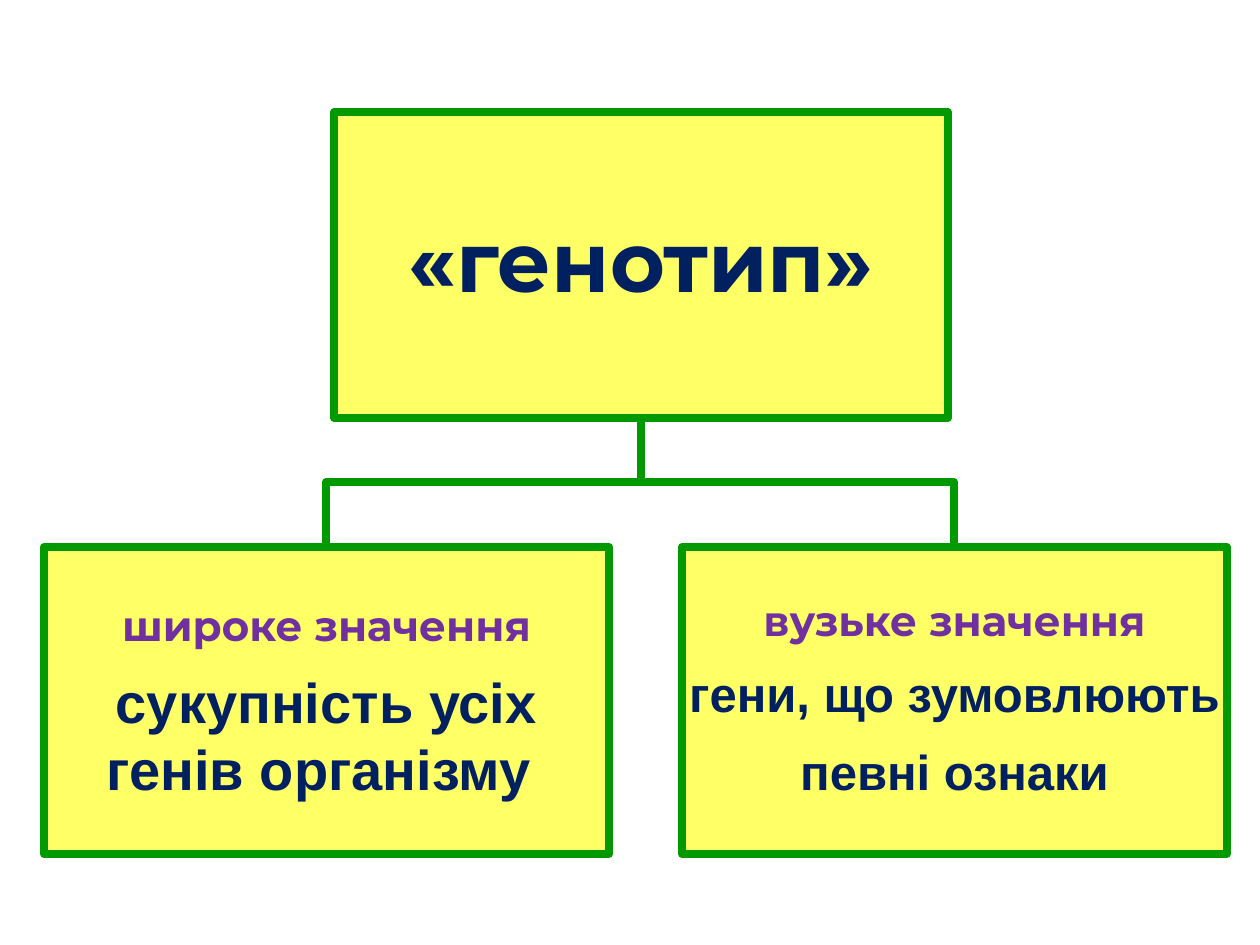
from collections import namedtuple
from dataclasses import dataclass

from pptx import Presentation
from pptx.dml.color import RGBColor
from pptx.enum.shapes import MSO_SHAPE as Preset
from pptx.enum.text import MSO_ANCHOR as Anchor, MSO_AUTO_SIZE as AutoSize, PP_ALIGN as Align
from pptx.util import Pt

PX = 914400 / 126
TITLE_ONLY = 5

Box = namedtuple("Box", "left top width height")
Line = namedtuple("Line", "text style")


@dataclass(frozen=True)
class Theme:
    fill: str = "FFFF66"
    border: str = "009900"
    ink: str = "002060"
    accent: str = "7030A0"
    border_width: float = 4.5
    term_size: int = 48
    heading_size: int = 24
    broad_size: int = 32
    narrow_size: int = 28
    display_font: str = "Montserrat"
    body_font: str = "Arial"


THEME = Theme()

STYLES = {
    "term": dict(font=THEME.display_font, size=THEME.term_size, color=THEME.ink, spacing=0.9, after=0),
    "broad_heading": dict(font=THEME.display_font, size=THEME.heading_size, color=THEME.accent, spacing=1.0, after=10),
    "narrow_heading": dict(font=THEME.display_font, size=THEME.heading_size, color=THEME.accent, spacing=0.9, after=10),
    "broad": dict(font=THEME.body_font, size=THEME.broad_size, color=THEME.ink, spacing=1.0, after=0),
    "narrow": dict(font=THEME.body_font, size=THEME.narrow_size, color=THEME.ink, spacing=1.0, after=11),
}

TERM_BOX = Box(334, 112, 614, 306)
TERM = [Line("«генотип»", "term")]
MEANINGS = [
    (Box(44, 547, 565, 307), [
        Line("широке значення", "broad_heading"),
        Line("сукупність усіх генів організму ", "broad"),
    ]),
    (Box(682, 547, 545, 307), [
        Line("вузьке значення", "narrow_heading"),
        Line("гени, що зумовлюють", "narrow"),
        Line("певні ознаки", "narrow"),
    ]),
]


def px(length):
    return round(length * PX)


def apply(target, values):
    for name, value in values.items():
        setattr(target, name, value)


def draw_border(shape):
    shape.shadow.inherit = False
    shape.line.color.rgb = RGBColor.from_string(THEME.border)
    shape.line.width = Pt(THEME.border_width)


def write_lines(frame, lines):
    apply(frame, dict(word_wrap=True, auto_size=AutoSize.NONE, vertical_anchor=Anchor.MIDDLE))
    apply(frame, {f"margin_{side}": px(3) for side in ("left", "top", "right", "bottom")})
    for index, line in enumerate(lines):
        style = STYLES[line.style]
        paragraph = frame.add_paragraph() if index else frame.paragraphs[0]
        paragraph.text = line.text
        apply(paragraph, dict(alignment=Align.CENTER, line_spacing=style["spacing"],
                              space_before=Pt(0), space_after=Pt(style["after"])))
        apply(paragraph.font, dict(name=style["font"], size=Pt(style["size"]), bold=True))
        paragraph.font.color.rgb = RGBColor.from_string(style["color"])


def format_node(node, lines):
    node.fill.solid()
    node.fill.fore_color.rgb = RGBColor.from_string(THEME.fill)
    draw_border(node)
    write_lines(node.text_frame, lines)


def add_term(slide):
    term = slide.shapes.title
    apply(term, {side: px(length) for side, length in TERM_BOX._asdict().items()})
    format_node(term, TERM)


def add_branch(slide, parent, child):
    start_x, start_y = parent.left + parent.width / 2, parent.top + parent.height
    end_x, end_y = child.left + child.width / 2, child.top
    middle_y = (start_y + end_y) / 2
    builder = slide.shapes.build_freeform(start_x, start_y, scale=PX)
    builder.add_line_segments([(start_x, middle_y), (end_x, middle_y), (end_x, end_y)], close=False)
    branch = builder.convert_to_shape()
    branch.fill.background()
    draw_border(branch)


def add_meaning(slide, box, lines):
    meaning = slide.shapes.add_shape(Preset.RECTANGLE, *map(px, box))
    format_node(meaning, lines)


def main():
    deck = Presentation()
    apply(deck, dict(slide_width=px(1260), slide_height=px(945)))
    slide = deck.slides.add_slide(deck.slide_layouts[TITLE_ONLY])
    add_term(slide)
    for box, lines in MEANINGS:
        add_branch(slide, TERM_BOX, box)
        add_meaning(slide, box, lines)
    deck.save("out.pptx")


if __name__ == "__main__":
    main()
